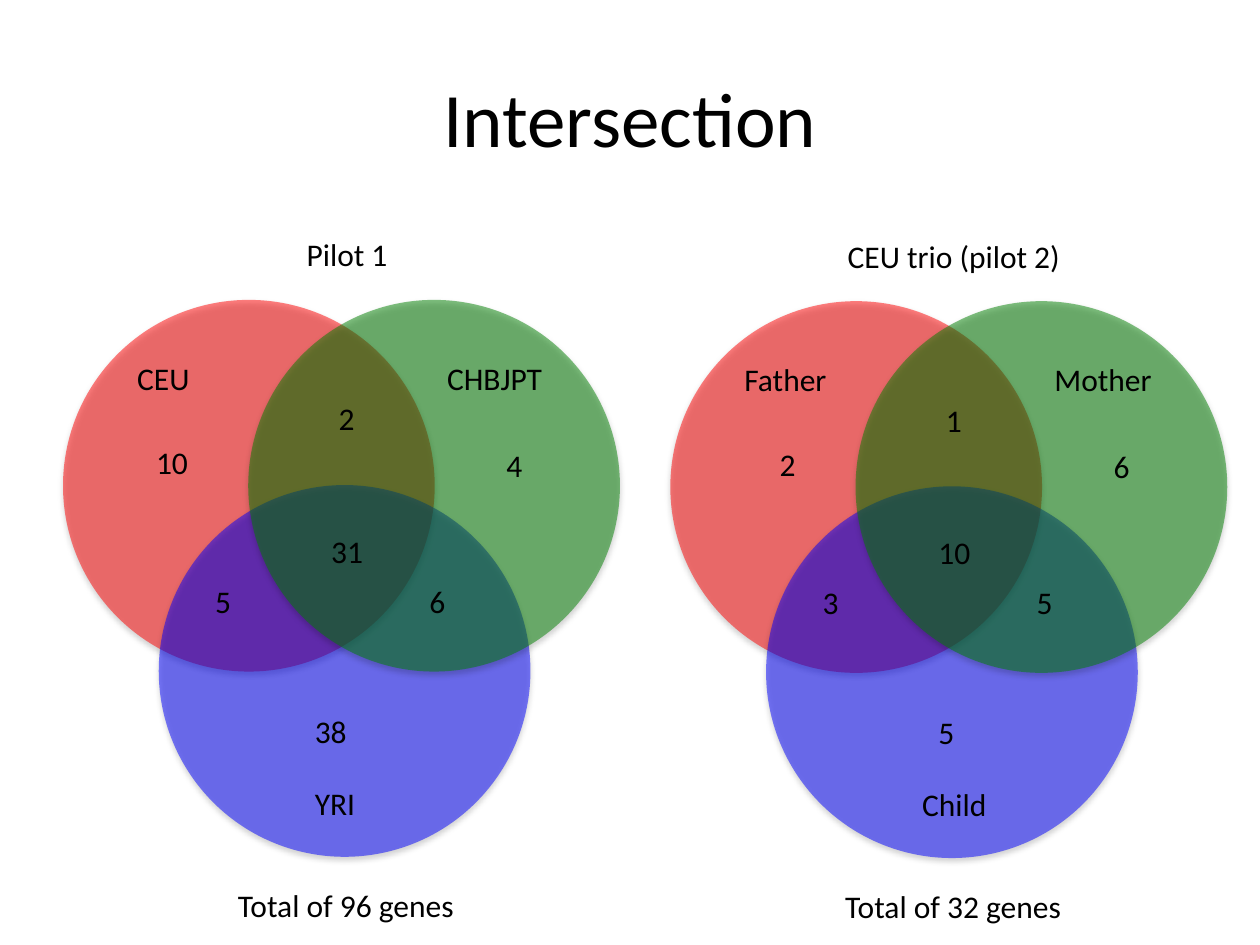
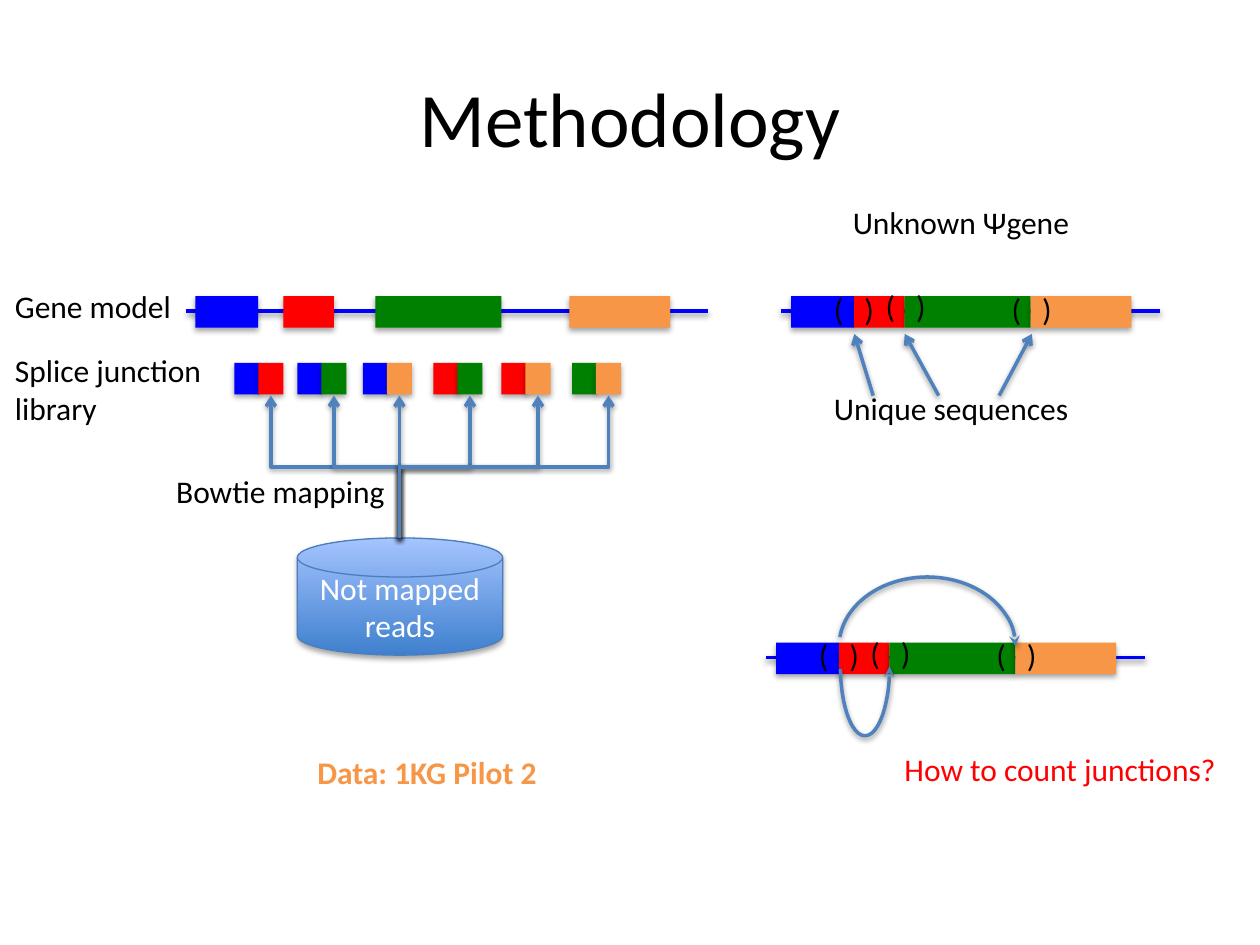
from dataclasses import dataclass

from lxml import etree
from pptx import Presentation
from pptx.dml.color import RGBColor
from pptx.enum.shapes import MSO_CONNECTOR, MSO_SHAPE
from pptx.enum.text import MSO_ANCHOR, MSO_AUTO_SIZE, PP_ALIGN
from pptx.oxml.ns import qn
from pptx.util import Emu, Pt

STRAIGHT, ELBOW = MSO_CONNECTOR.STRAIGHT, MSO_CONNECTOR.ELBOW
OVAL, RECT, ARC = MSO_SHAPE.OVAL, MSO_SHAPE.RECTANGLE, MSO_SHAPE.ARC
DISK = MSO_SHAPE.FLOWCHART_MAGNETIC_DISK
LEFT, CENTER = PP_ALIGN.LEFT, PP_ALIGN.CENTER
TOP, MIDDLE = MSO_ANCHOR.TOP, MSO_ANCHOR.MIDDLE
GROW, FIXED = MSO_AUTO_SIZE.SHAPE_TO_FIT_TEXT, MSO_AUTO_SIZE.NONE


@dataclass(frozen=True)
class Theme:
    font: str = "Calibri"
    title: int = 44
    body: int = 18
    stroke: int = 2
    ink: str = "000000"
    white: str = "FFFFFF"
    red: str = "FF0000"
    green: str = "008000"
    blue: str = "0000FF"
    orange: str = "F79646"
    steel: str = "4F81BD"
    edge: str = "4B7EBC"
    dark: str = "3F80CE"
    light: str = "A4C4FF"


T = Theme()
PX = 9144  # 100 px to the inch
LINE_H = 40

# ---- Intersection ----
CIRCLE = 295
CIRCLES = [(50, 238, T.red), (126, 385, T.blue), (197, 238, T.green)]
NAME_AT = [(99, 280), (345, 280), (240, 617)]
# Right edge and top of each count
COUNT_AT = [(160, 347), (425, 349), (286, 560), (292, 312), (194, 457),
            (364, 457), (299, 417)]
HEAD_AT, TOTAL_AT = (276, 182), (179, 698)
VENNS = [
    dict(shift=(0, 0), head=("Pilot 1", 85), total="Total of 96 genes",
         names=[("CEU", 62), ("CHBJPT", 97), ("YRI", 53)],
         counts=[10, 4, 38, 2, 5, 6, 31]),
    dict(shift=(482, 1), head=("CEU trio (pilot 2)", 190), total="Total of 32 genes",
         names=[("Father", 86), ("Mother", 98), ("Child", 72)],
         counts=[2, 6, 5, 1, 3, 5, 10]),
]

# ---- Methodology ----
EXONS = [(50, T.blue), (40, T.red), (100, T.green), (80, T.orange)]
BAR_H = 25
MODEL = dict(x=148, y=235, length=414, starts=[7, 77, 150, 304])
PSEUDO = dict(x=620, y=235, length=301, starts=[8, 58, 98, 198])
COUNTED = dict(PSEUDO, x=608, y=510)
BRACKETS = [(32, -10), (73, -12), (173, -10)]
PAIR_Y, HALF = 288, 20
PAIRS = [
    (186, T.blue, T.red), (236, T.blue, T.green), (288, T.blue, T.orange),
    (344, T.red, T.green), (398, T.red, T.orange), (454, T.green, T.orange),
]
READS = ("Not mapped reads", 236, 427, 163, 93)
NOTES = [
    ("Gene model", 2, 223, 145, {}),
    ("Splice junction\nlibrary", 2, 274, 169, {}),
    ("Bowtie mapping", 130, 370, 187, {}),
    ("Unknown Ψgene", 667, 156, 194, {}),
    ("Unique sequences", 652, 304, 208, {}),
    ("Data: 1KG Pilot 2", 242, 593, 196, dict(color=T.orange, bold=True)),
    ("How to count junctions?", 708, 590, 270, dict(color=T.red)),
]
POINTERS = [(793, 819), (693, 678), (745, 718)]
ARCS = [(666, 458, 140, 110, False), (667, 474, 39, 110, True)]


def px(*sizes):
    return [Emu(round(size * PX)) for size in sizes]


def rgb(code):
    return RGBColor.from_string(code)


def write(shape, text, color=T.ink, size=T.body, bold=False, align=LEFT,
          anchor=TOP, wrap=False, spread=0):
    """Fill a shape with text; spread is extra letter spacing in points."""
    frame = shape.text_frame
    frame.text = text
    frame.word_wrap = wrap
    frame.auto_size = FIXED if wrap else GROW
    frame.vertical_anchor = anchor
    for para in frame.paragraphs:
        para.alignment = align
        for run in para.runs:
            font = run.font
            font.name, font.size, font.bold = T.font, Pt(size), bold
            font.color.rgb = rgb(color)
            if spread:
                run._r.get_or_add_rPr().set("spc", str(spread * 100))


def label(slide, text, x, y, w, **style):
    h = LINE_H + 31 * text.count("\n")
    write(slide.shapes.add_textbox(*px(x, y, w, h)), text, **style)


def shade(shape, dist=23000, alpha=35000):
    """Give a shape or connector a soft shadow straight below it."""
    effects = etree.SubElement(shape.element.spPr, qn("a:effectLst"))
    outer = etree.SubElement(effects, qn("a:outerShdw"), blurRad="40000",
                             dist=str(dist), dir="5400000", rotWithShape="0")
    tint = etree.SubElement(outer, qn("a:srgbClr"), val=T.ink)
    etree.SubElement(tint, qn("a:alpha"), val=str(alpha))


def block(slide, kind, x, y, w, h, color, alpha=None):
    shape = slide.shapes.add_shape(kind, *px(x, y, w, h))
    shape.fill.solid()
    shape.fill.fore_color.rgb = rgb(color)
    if alpha:
        tint = shape.element.spPr.find(".//" + qn("a:srgbClr"))
        etree.SubElement(tint, qn("a:alpha"), val=str(alpha * 1000))
    shape.line.fill.background()
    shade(shape)


def stroke(shape, color, head=None):
    """Style the line of an arc or connector, with an arrowhead at its end."""
    shape.line.width = Pt(T.stroke)
    shape.line.color.rgb = rgb(color)
    if head:
        etree.SubElement(shape.line._get_or_add_ln(), qn("a:tailEnd"), type=head)
    shade(shape, 20000, 38000)


def link(slide, x1, y1, x2, y2, color=T.steel, head=None):
    stroke(slide.shapes.add_connector(STRAIGHT, *px(x1, y1, x2, y2)), color, head)


def fork(slide, x1, y1, x2, y2):
    """Draw an arrow that rises, runs sideways and rises again."""
    rise, run = y1 - y2, abs(x2 - x1)
    midx, midy = (x1 + x2) / 2, (y1 + y2) / 2
    left, top = midx - rise / 2, midy - run / 2
    line = slide.shapes.add_connector(ELBOW, *px(left, top, left + rise, top + run))
    turn = line.element.spPr.find(qn("a:xfrm"))
    turn.set("rot", str((270 if x2 < x1 else 90) * 60000))
    turn.set("flipV", "1")
    if x2 > x1:
        turn.set("flipH", "1")
    stroke(line, T.steel, "arrow")


def gene(slide, x, y, length, starts):
    mid = y + BAR_H // 2
    link(slide, x, mid, x + length, mid, T.blue)
    for start, (width, color) in zip(starts, EXONS):
        block(slide, RECT, x + start, y, width, BAR_H, color)


def start(deck, title):
    slide = deck.slides.add_slide(deck.slide_layouts[5])
    head = slide.shapes.title
    head.left, head.top, head.width, head.height = px(50, 30, 900, 125)
    write(head, title, size=T.title, align=CENTER, anchor=MIDDLE, wrap=True)
    return slide


def venn(slide, shift, head, total, names, counts):
    dx, dy = shift
    for x, y, color in CIRCLES:
        block(slide, OVAL, x + dx, y + dy, CIRCLE, CIRCLE, color, alpha=50)
    for (x, y), (name, width) in zip(NAME_AT, names):
        label(slide, name, x + dx, y + dy, width)
    for (right, y), count in zip(COUNT_AT, counts):
        width = 33 if count < 10 else 46
        label(slide, str(count), right - width + dx, y + dy, width)
    text, width = head
    label(slide, text, HEAD_AT[0] + dx - width / 2, HEAD_AT[1] + dy, width)
    label(slide, total, TOTAL_AT[0] + dx, TOTAL_AT[1] + dy, 193)


def store(slide, text, *box):
    disk = slide.shapes.add_shape(DISK, *px(*box))
    disk.fill.gradient()
    disk.fill.gradient_angle = 90
    for stop, color, spot in zip(disk.fill.gradient_stops, (T.dark, T.light), (0, 1)):
        stop.color.rgb, stop.position = rgb(color), spot
    disk.line.color.rgb = rgb(T.edge)
    disk.line.width = Pt(0.75)
    shade(disk)
    write(disk, text, color=T.white, align=CENTER, anchor=MIDDLE, wrap=True)


def library(slide):
    """Draw the exon pairs and the arrows that reach them from the reads."""
    text, x, y, w, h = READS
    store(slide, text, x, y, w, h)
    hub = x + w // 2
    for left, *colors in PAIRS:
        for i, color in enumerate(colors):
            block(slide, RECT, left + i * (HALF - 1), PAIR_Y, HALF, BAR_H, color)
        goal, foot = left + HALF * 3 // 2 - 1, PAIR_Y + BAR_H + 1
        if goal == hub:
            link(slide, hub, y, goal, foot, head="arrow")
        else:
            fork(slide, hub, y, goal, foot)


def loop(slide, x, y, w, h, below):
    arc = slide.shapes.add_shape(ARC, *px(x, y, w, h))
    arc.adjustments[0], arc.adjustments[1] = 111.66, 0
    arc.fill.background()
    if below:
        arc.element.spPr.find(qn("a:xfrm")).set("flipV", "1")
    stroke(arc, T.steel, "stealth")


def main():
    deck = Presentation()
    deck.slide_width, deck.slide_height = px(1000, 750)

    slide = start(deck, "Intersection")
    for data in VENNS:
        venn(slide, **data)

    slide = start(deck, "Methodology")
    gene(slide, **MODEL)
    library(slide)
    for row in (PSEUDO, COUNTED):
        gene(slide, **row)
        for dx, dy in BRACKETS:
            label(slide, "( )", row["x"] + dx, row["y"] + dy, 53, spread=4)
    for text, x, y, w, style in NOTES:
        label(slide, text, x, y, w, **style)
    for foot, tip in POINTERS:
        link(slide, foot, 314, tip, 265, head="arrow")
    for arc in ARCS:
        loop(slide, *arc)

    deck.save("out.pptx")


if __name__ == "__main__":
    main()
